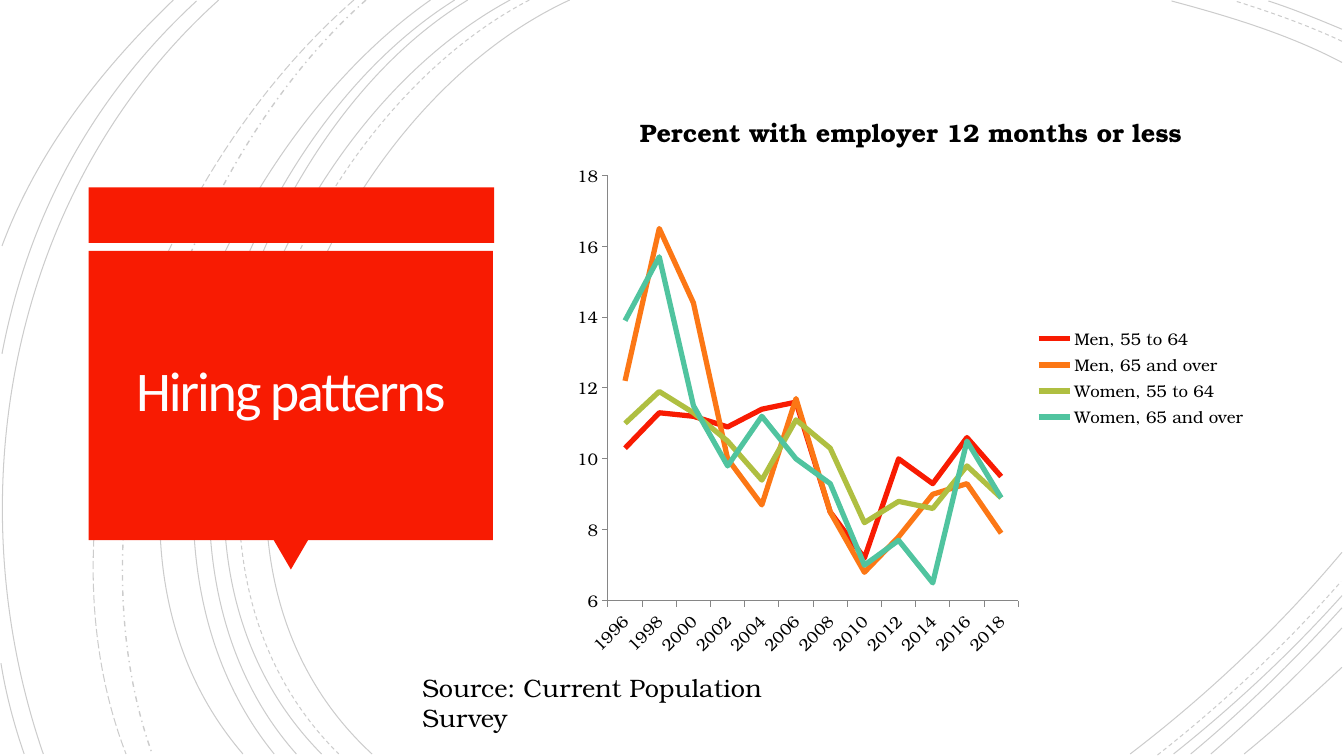
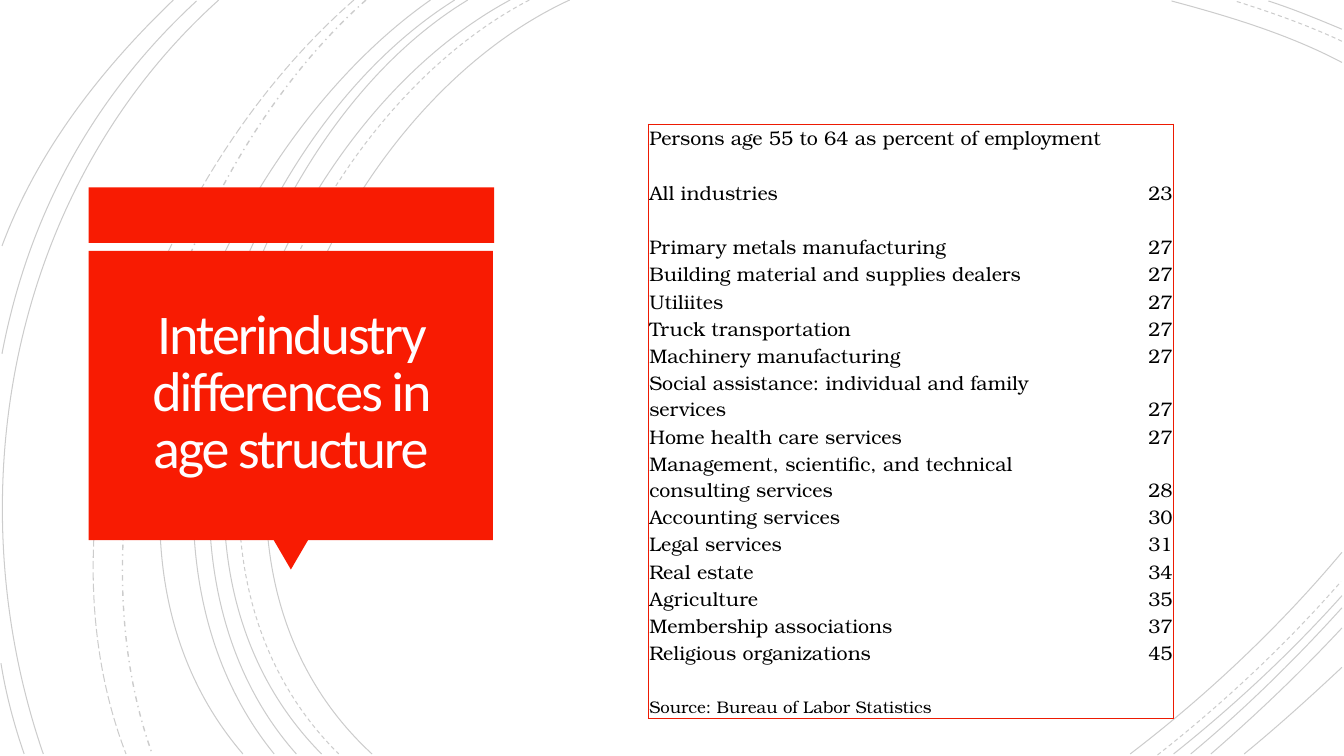
from lxml.etree import SubElement
from pptx import Presentation
from pptx.chart.data import CategoryChartData
from pptx.dml.color import RGBColor
from pptx.enum.chart import XL_CHART_TYPE, XL_LEGEND_POSITION, XL_TICK_MARK
from pptx.enum.dml import MSO_LINE
from pptx.enum.shapes import MSO_SHAPE
from pptx.enum.text import MSO_ANCHOR, PP_ALIGN
from pptx.oxml.ns import qn
from pptx.util import Inches, Pt

RED = "F81B02"
BORDER_RED = "ED1A02"
BLACK = "000000"
WHITE = "FFFEFF"
AXIS_GRAY = "868686"
TITLE_FONT = "Calibri"
BODY_FONT = "TeX Gyre Bonum"

SOLID_CURVES = [
    [(5.65, 0), (3.15, 1.15), (1.43, 5.4), (3.69, 7.48)],
    [(13.31, 0.62), (12.78, 0.34), (12.18, 0.16), (11.62, 0.01)],
    [(11.21, 7.48), (11.97, 6.9), (12.69, 6.22), (13.31, 5.48)],
    [(5.06, 0), (2.7, 1.27), (1.1, 5.37), (3.19, 7.48)],
    [(13.31, 0.29), (13.07, 0.19), (12.83, 0.09), (12.58, 0.01)],
    [(11.64, 7.48), (12.23, 7.01), (12.8, 6.48), (13.31, 5.91)],
    [(4.64, 0), (2.44, 1.33), (1.1, 5.41), (2.94, 7.48)],
    [(11.81, 7.48), (12.34, 7.04), (12.84, 6.55), (13.31, 6.03)],
    [(4.51, 0), (2.31, 1.38), (0.97, 5.33), (2.72, 7.48)],
    [(12.01, 7.48), (12.46, 7.09), (12.9, 6.67), (13.31, 6.23)],
    [(4.27, 0), (2.17, 1.47), (0.53, 5.29), (2.41, 7.48)],
    [(12.34, 7.48), (12.67, 7.21), (12.99, 6.92), (13.31, 6.62)],
    [(2.17, 0), (0.11, 1.85), (-0.46, 4.9), (0.43, 7.48)],
    [(1.95, 0.01), (0.92, 0.96), (0.28, 2.14), (0.02, 3.51)],
    [(0.01, 6.58), (0.06, 6.89), (0.14, 7.19), (0.24, 7.48)],
    [(1.72, 0), (1, 0.69), (0.37, 1.5), (0.02, 2.44)],
]
DASHED_CURVES = [
    [(5.25, 0), (2.85, 1.25), (1.23, 5.37), (3.36, 7.48)],
    [(13.31, 0.41), (12.97, 0.25), (12.6, 0.12), (12.25, 0.01)],
    [(11.48, 7.49), (12.13, 6.98), (12.75, 6.4), (13.3, 5.77)],
]
DASH_DOT_CURVES = [[(3.63, 0), (1.76, 1.66), (0.65, 5.09), (1.51, 7.48)]]
LONG_DASH_CURVES = [[(3.51, 0), (1.57, 1.69), (0.29, 4.99), (1.25, 7.48)]]
CURVE_GROUPS = [
    (SOLID_CURVES, MSO_LINE.SOLID, 0.75),
    (DASHED_CURVES, MSO_LINE.DASH, 0.75),
    (DASH_DOT_CURVES, MSO_LINE.DASH_DOT, 1),
    (LONG_DASH_CURVES, MSO_LINE.LONG_DASH, 0.75),
]

YEARS = [str(year) for year in range(1996, 2019, 2)]
HIRING_SERIES = [
    ("Men, 55 to 64", RED,
     (10.3, 11.3, 11.2, 10.9, 11.4, 11.6, 8.5, 7.2, 10, 9.3, 10.6, 9.5)),
    ("Men, 65 and over", "FC7715",
     (12.2, 16.5, 14.4, 10, 8.7, 11.7, 8.5, 6.8, 7.8, 9, 9.3, 7.9)),
    ("Women, 55 to 64", "AFBF41",
     (11, 11.9, 11.3, 10.5, 9.4, 11.1, 10.3, 8.2, 8.8, 8.6, 9.8, 8.9)),
    ("Women, 65 and over", "50C49F",
     (13.9, 15.7, 11.5, 9.8, 11.2, 10, 9.3, 7, 7.7, 6.5, 10.5, 8.9)),
]
ROW_HEIGHT = 0.27
WRAPPED_ROW_HEIGHT = 0.53
SOURCE_ROW_HEIGHT = 0.25
INDUSTRY_ROWS = [
    ("Persons age 55 to 64 as percent of employment", ""),
    ("", ""),
    ("All industries", "23"),
    ("", ""),
    ("Primary metals manufacturing", "27"),
    ("Building material and supplies dealers", "27"),
    ("Utiliites", "27"),
    ("Truck transportation", "27"),
    ("Machinery manufacturing", "27"),
    ("Social assistance: individual and family services", "27"),
    ("Home health care services", "27"),
    ("Management, scientific, and technical consulting services", "28"),
    ("Accounting services", "30"),
    ("Legal services", "31"),
    ("Real estate", "34"),
    ("Agriculture", "35"),
    ("Membership associations", "37"),
    ("Religious organizations", "45"),
    ("", ""),
    ("Source: Bureau of Labor Statistics", ""),
]


def color(value):
    return RGBColor.from_string(value)


def set_font(font, size, name=BODY_FONT, fill=BLACK, bold=False):
    font.size = Pt(size)
    font.name = name
    font.bold = bold
    font.color.rgb = color(fill)


def add_span(para, text, size, name=BODY_FONT, fill=BLACK):
    span = para.add_run()
    span.text = text
    set_font(span.font, size, name, fill)
    return span


def add_curve(group, points, dash, width):
    start, *rest = [(Inches(x), Inches(y)) for x, y in points]
    builder = group.shapes.build_freeform(*start)
    builder.add_line_segments(rest, close=False)
    curve = builder.convert_to_shape()
    segments = list(curve._element.iter(qn("a:lnTo")))
    outline = segments[0].getparent()
    bezier = SubElement(outline, qn("a:cubicBezTo"))
    for segment in segments:
        bezier.append(segment[0])
        outline.remove(segment)
    curve.shadow.inherit = False
    curve.fill.background()
    curve.line.width = Pt(width)
    curve.line.color.rgb = color(BLACK)
    curve.line.dash_style = dash
    tint = curve.line.fill._xPr.find(qn("a:solidFill"))[0]
    SubElement(tint, qn("a:alpha"), val="20000")


def add_red_shape(group, kind, left, top, width, height):
    shape = group.shapes.add_shape(
        kind, Inches(left), Inches(top), Inches(width), Inches(height))
    shape.shadow.inherit = False
    shape.fill.solid()
    shape.fill.fore_color.rgb = color(RED)
    shape.line.fill.background()
    return shape


def decorate_layout(layout, page):
    arcs = page.shapes.add_group_shape()
    for curves, dash, width in CURVE_GROUPS:
        for points in curves:
            add_curve(arcs, points, dash, width)
    panel = page.shapes.add_group_shape()
    add_red_shape(panel, MSO_SHAPE.RECTANGLE, 0.88, 1.86, 4.02, 0.55)
    pointer = add_red_shape(panel, MSO_SHAPE.ISOSCELES_TRIANGLE, 2.71, 5.35, 0.35, 0.3)
    pointer.rotation = 180
    add_red_shape(panel, MSO_SHAPE.RECTANGLE, 0.88, 2.49, 4.01, 2.87)
    for group in (arcs, panel):
        layout.shapes._spTree.append(group._element)


def add_text_box(page, left, top, width, height):
    box = page.shapes.add_textbox(
        Inches(left), Inches(top), Inches(width), Inches(height))
    box.text_frame.word_wrap = True
    return box.text_frame


def add_title(page, text):
    frame = add_text_box(page, 0.97, 2.57, 3.83, 2.69)
    frame.vertical_anchor = MSO_ANCHOR.MIDDLE
    frame.margin_left = frame.margin_right = Inches(0.25)
    frame.margin_top = frame.margin_bottom = Inches(0.25)
    para = frame.paragraphs[0]
    para.alignment = PP_ALIGN.CENTER
    para.line_spacing = 0.85
    span = add_span(para, text, 40, TITLE_FONT, WHITE)
    span.font._element.set("spc", "-150")


def style_axis(axis):
    axis.has_major_gridlines = False
    axis.major_tick_mark = XL_TICK_MARK.OUTSIDE
    axis.format.line.color.rgb = color(AXIS_GRAY)
    axis.format.line.width = Pt(0.75)
    set_font(axis.tick_labels.font, 12)


def place_plot(chart, left, top, width, height):
    area = chart._chartSpace.chart.plotArea
    layout = area.find(qn("c:layout"))
    if layout is None:
        layout = SubElement(area, qn("c:layout"))
        area.insert(0, layout)
    manual = SubElement(layout, qn("c:manualLayout"))
    settings = [("layoutTarget", "inner"), ("xMode", "edge"), ("yMode", "edge"),
                ("x", left), ("y", top), ("w", width), ("h", height)]
    for name, value in settings:
        SubElement(manual, qn("c:" + name), val=str(value))


def add_hiring_chart(page):
    data = CategoryChartData()
    data.categories = YEARS
    for name, _, values in HIRING_SERIES:
        data.add_series(name, values)
    width, height = 6.87, 5.74
    chart = page.shapes.add_chart(
        XL_CHART_TYPE.LINE, Inches(5.6), Inches(0.88), Inches(width), Inches(height), data).chart
    set_font(chart.font, 10)
    chart.has_title = True
    add_span(chart.chart_title.text_frame.paragraphs[0],
             "Percent with employer 12 months or less", 18).font.bold = True
    chart.has_legend = True
    chart.legend.position = XL_LEGEND_POSITION.RIGHT
    chart.legend.include_in_layout = False
    set_font(chart.legend.font, 12)
    style_axis(chart.category_axis)
    style_axis(chart.value_axis)
    chart.category_axis._element.find(qn("c:txPr"))[0].set("rot", "-2700000")
    chart.value_axis.minimum_scale = 6
    chart.value_axis.maximum_scale = 18
    chart.value_axis.major_unit = 2
    place_plot(chart, 0.43 / width, 0.86 / height, 4.07 / width, 4.22 / height)
    plot = chart.plots[0]
    plot.vary_by_categories = False
    for series, (_, tint, _) in zip(plot.series, HIRING_SERIES):
        series.smooth = False
        series.format.line.color.rgb = color(tint)
        series.format.line.width = Pt(3.75)


def set_borders(cell, sides):
    properties = cell._tc.get_or_add_tcPr()
    for side in ("L", "R", "T", "B"):
        line = SubElement(properties, qn("a:ln" + side), w=str(Pt(0.75)))
        if side in sides:
            fill = SubElement(line, qn("a:solidFill"))
            SubElement(fill, qn("a:srgbClr"), val=BORDER_RED)
        else:
            SubElement(line, qn("a:noFill"))


def fill_cell(cell, text, size, alignment, sides):
    set_borders(cell, sides)
    cell.fill.background()
    cell.vertical_anchor = MSO_ANCHOR.BOTTOM
    cell.margin_left = cell.margin_right = cell.margin_top = Inches(0.01)
    cell.margin_bottom = 0
    para = cell.text_frame.paragraphs[0]
    para.alignment = alignment
    if text:
        add_span(para, text, size)
    else:
        end = SubElement(para._p, qn("a:endParaRPr"), sz=str(size * 100))
        SubElement(end, qn("a:latin"), typeface=BODY_FONT)


def row_height(industry, percent, is_last):
    if is_last:
        return SOURCE_ROW_HEIGHT
    return WRAPPED_ROW_HEIGHT if percent and len(industry) > 45 else ROW_HEIGHT


def add_industry_table(page):
    last = len(INDUSTRY_ROWS) - 1
    table = page.shapes.add_table(
        len(INDUSTRY_ROWS), 2, Inches(6.43), Inches(1.23), Inches(5.21), Inches(5.9)).table
    table.first_row = table.horz_banding = False
    table.columns[0].width = Inches(4.16)
    table.columns[1].width = Inches(1.05)
    for i, (industry, percent) in enumerate(INDUSTRY_ROWS):
        table.rows[i].height = Inches(row_height(industry, percent, i == last))
        size = 12 if i == last else 14
        edges = "T" if i == 0 else "B" if i == last else ""
        outer = "LR" if i == 0 else "L"
        fill_cell(table.cell(i, 0), industry, size, PP_ALIGN.LEFT, edges + outer)
        fill_cell(table.cell(i, 1), percent, size, PP_ALIGN.RIGHT, edges + "R")
    table.cell(0, 0).merge(table.cell(0, 1))


def main():
    deck = Presentation()
    deck.slide_width = Inches(13.33)
    deck.slide_height = Inches(7.5)
    layout = deck.slide_layouts[6]

    hiring = deck.slides.add_slide(layout)
    decorate_layout(layout, hiring)
    add_title(hiring, "Hiring patterns")
    add_hiring_chart(hiring)
    source = add_text_box(hiring, 4.09, 6.62, 4.28, 0.4)
    add_span(source.paragraphs[0], "Source: Current Population Survey", 18)

    industries = deck.slides.add_slide(layout)
    add_title(industries, "Interindustry differences in age structure")
    add_industry_table(industries)

    deck.save("out.pptx")


if __name__ == "__main__":
    main()
